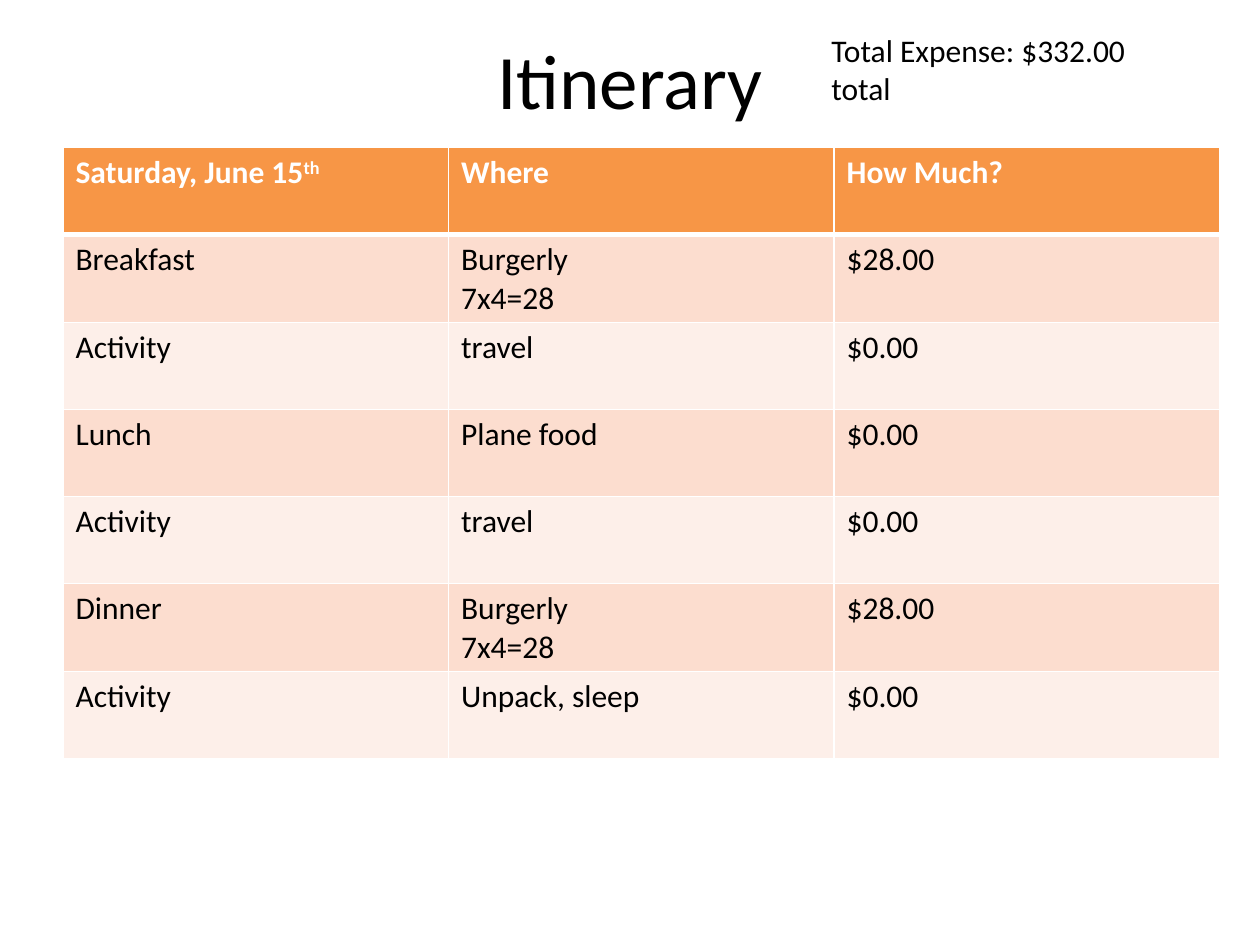
from pptx import Presentation
from pptx.dml.color import RGBColor
from pptx.enum import text
from pptx.oxml import parse_xml
from pptx.oxml.ns import nsdecls
from pptx.util import Inches, Pt

TITLE = "Itinerary"
TOTAL = "Total Expense: $332.00\ntotal"
HEADER = ["Saturday, June 15", "Where", "How Much?"]
ORDINAL = "th"
PLANS = [
    ["Breakfast", "Burgerly\n7x4=28", "$28.00"],
    ["Activity", "travel", "$0.00"],
    ["Lunch", "Plane food", "$0.00"],
    ["Activity", "travel", "$0.00"],
    ["Dinner", "Burgerly\n7x4=28", "$28.00"],
    ["Activity", "Unpack, sleep", "$0.00"],
]
ORANGE, BANDS = "F79646", ["FCDDCF", "FDEFE9"]
COL_W, ROW_H = 3.06, 0.69


def rgb(value):
    return RGBColor.from_string(value)


def style(tf, size, color="000000", bold=False):
    for p in tf.paragraphs:
        for r in p.runs:
            r.font.name = "Calibri"
            r.font.size = Pt(size)
            r.font.bold = bold
            r.font.color.rgb = rgb(color)


def set_borders(cell, bottom):
    tcPr = cell._tc.get_or_add_tcPr()
    sides = {"L": 1, "R": 1, "T": 1, "B": bottom}
    for i, (side, width) in enumerate(sides.items()):
        tcPr.insert(i, parse_xml(
            f'<a:ln{side} {nsdecls("a")} w="{Pt(width)}"><a:solidFill>'
            f'<a:srgbClr val="FFFFFF"/></a:solidFill></a:ln{side}>'))


def add_title(s):
    title = s.shapes.title
    title.left, title.top = Inches(0.5), Inches(0)
    title.width, title.height = Inches(9), Inches(1.25)
    tf = title.text_frame
    tf.text = TITLE
    tf.vertical_anchor = text.MSO_ANCHOR.MIDDLE
    tf.paragraphs[0].alignment = text.PP_ALIGN.CENTER
    style(tf, 44)


def add_total(s):
    tf = s.shapes.add_textbox(
        Inches(6.5), Inches(0.2), Inches(3.08), Inches(0.71)).text_frame
    tf.word_wrap = True
    tf.auto_size = text.MSO_AUTO_SIZE.SHAPE_TO_FIT_TEXT
    tf.text = TOTAL
    style(tf, 18)


def add_itinerary(s):
    rows = [HEADER] + PLANS
    table = s.shapes.add_table(
        len(rows), len(HEADER), Inches(0.5), Inches(1.17),
        Inches(COL_W * len(HEADER)), Inches(ROW_H * len(rows))).table
    for i, row in enumerate(rows):
        head = i == 0
        for j, value in enumerate(row):
            cell = table.cell(i, j)
            tf = cell.text_frame
            tf.text = value
            if head and j == 0:
                r = tf.paragraphs[0].add_run()
                r.text = ORDINAL
                r.font._element.set("baseline", "30000")
            style(tf, 18, "FFFFFF" if head else "000000", head)
            cell.fill.solid()
            cell.fill.fore_color.rgb = rgb(ORANGE if head else BANDS[(i - 1) % 2])
            set_borders(cell, 3 if head else 1)


def main():
    prs = Presentation()
    prs.slide_width, prs.slide_height = Inches(10), Inches(7.5)
    s = prs.slides.add_slide(prs.slide_layouts[5])
    add_title(s)
    add_total(s)
    add_itinerary(s)
    prs.save("out.pptx")


if __name__ == "__main__":
    main()
